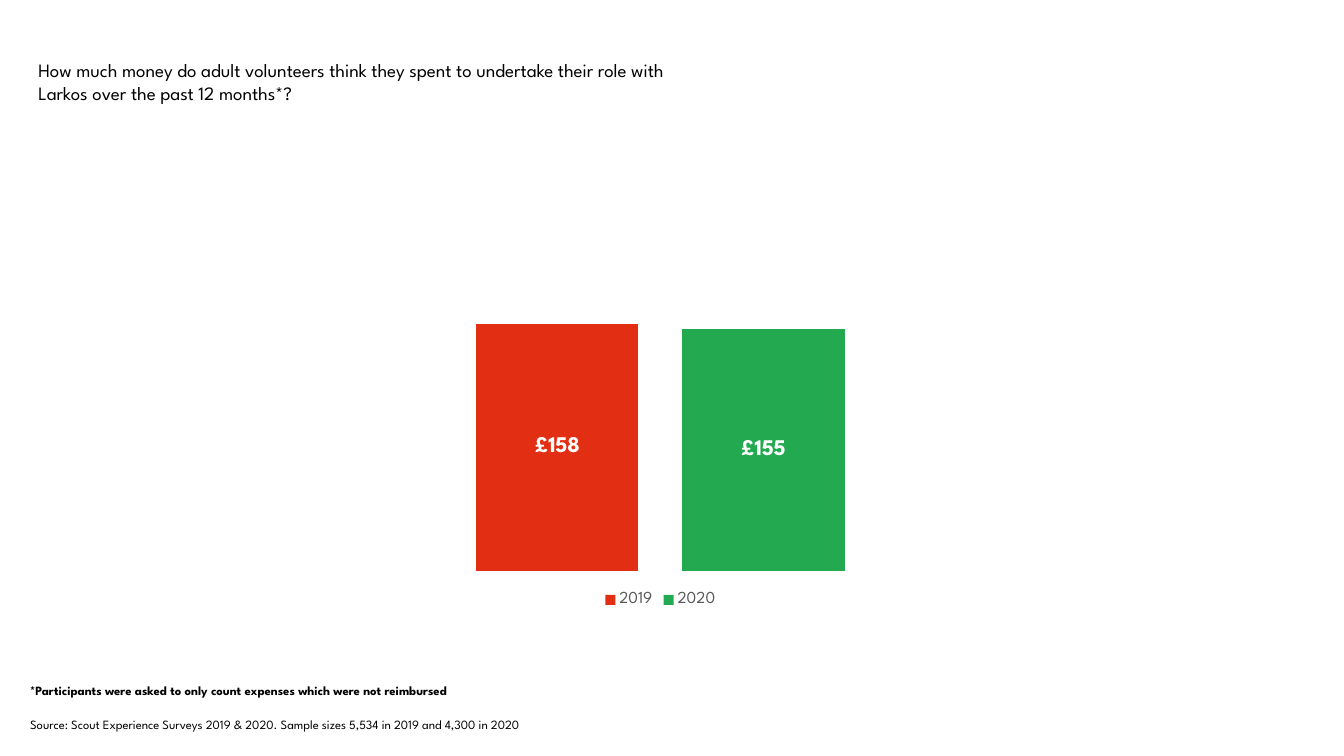
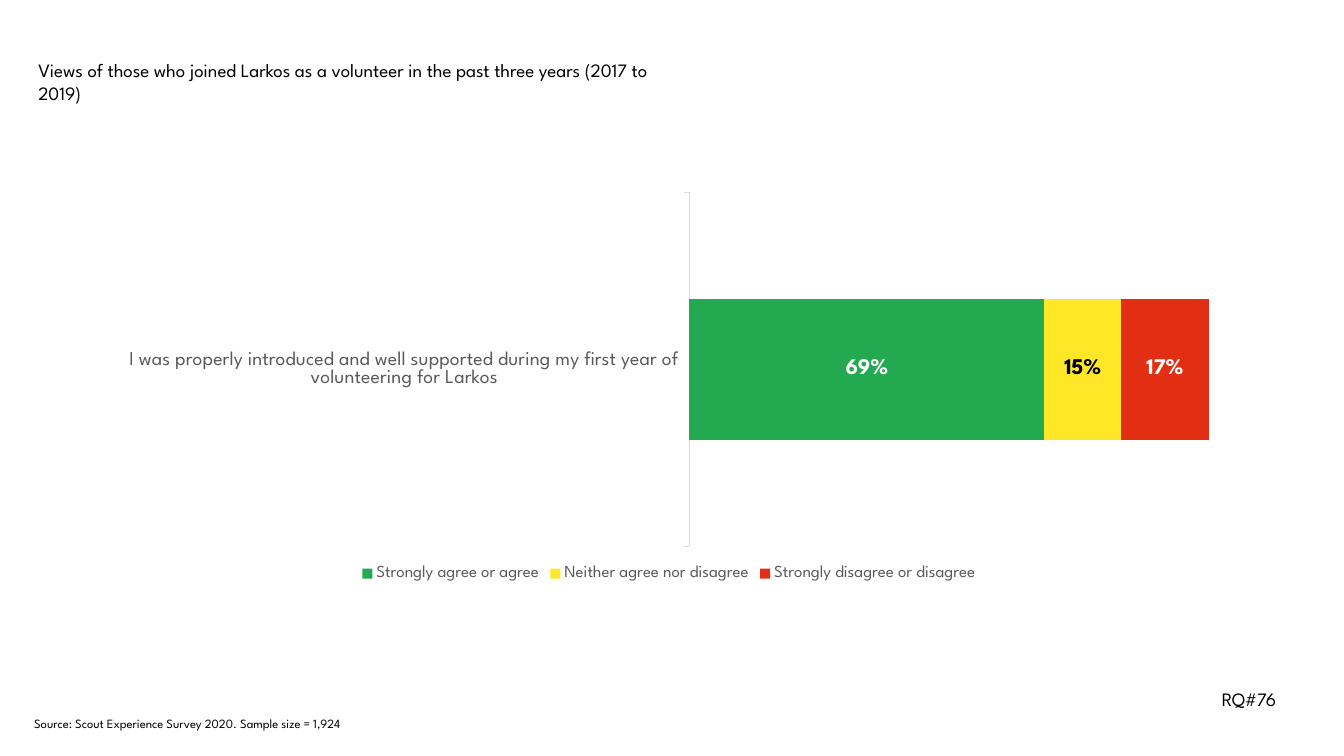
from pptx import Presentation, util as u
from pptx.chart.data import CategoryChartData
from pptx.dml.color import RGBColor
from pptx.enum import chart as charts, text

PX = 9144  # EMU per px, 100 px to the inch
FONT = "League Spartan"
BLACK, WHITE, GREY, RULE = "000000", "FFFFFF", "595959", "D9D9D9"
RED, GREEN, YELLOW = "E22E12", "23A950", "FFE627"


def px(*lengths):
    return [u.Emu(length * PX) for length in lengths]


def color(value):
    return RGBColor.from_string(value)


def style_font(font, size, ink=BLACK, bold=False):
    font.name, font.size, font.bold = FONT, u.Pt(size), bold
    font.color.rgb = color(ink)


def fill_text(shape, wording, size, bold=False):
    """Set left-aligned text that starts at the top of the shape."""
    frame = shape.text_frame
    frame.text = wording
    frame.word_wrap = True
    frame.auto_size = text.MSO_AUTO_SIZE.NONE
    frame.vertical_anchor = text.MSO_ANCHOR.TOP
    paragraph = frame.paragraphs[0]
    paragraph.alignment = text.PP_ALIGN.LEFT
    style_font(paragraph.runs[0].font, size, bold=bold)


def add_slide(presentation, title):
    slide = presentation.slides.add_slide(presentation.slide_layouts[5])
    shape = slide.shapes.title
    shape.left, shape.top, shape.width, shape.height = px(38, 58, 629, 45)
    fill_text(shape, title, 13.5)
    frame = shape.text_frame
    frame.margin_left = frame.margin_top = frame.margin_right = frame.margin_bottom = 0
    return slide


def add_note(slide, box, wording, size=9, bold=False):
    fill_text(slide.shapes.add_textbox(*px(*box)), wording, size, bold)


def add_bars(slide, box, kind, category, series_rows, label_format, gap, overlap):
    """Add a bar chart; each series row is name, value, fill, label colour."""
    data = CategoryChartData()
    data.categories = [category]
    for name, value, _, _ in series_rows:
        data.add_series(name, [value])
    chart = slide.shapes.add_chart(kind, *px(*box), data).chart
    style_font(chart.font, 10)
    chart.has_title = False
    chart.has_legend = True
    chart.legend.position = charts.XL_LEGEND_POSITION.BOTTOM
    chart.legend.include_in_layout = False
    style_font(chart.legend.font, 12, GREY)
    chart.value_axis.visible = False
    chart.value_axis.has_major_gridlines = False
    chart.value_axis.minimum_scale = 0

    plot = chart.plots[0]
    plot.gap_width, plot.overlap, plot.vary_by_categories = gap, overlap, False
    for series, (_, _, fill, ink) in zip(plot.series, series_rows):
        series.format.fill.solid()
        series.format.fill.fore_color.rgb = color(fill)
        labels = series.data_labels
        labels.show_value = True
        labels.number_format = label_format
        labels.number_format_is_linked = False
        labels.position = charts.XL_LABEL_POSITION.CENTER
        style_font(labels.font, 16, ink, bold=True)
    return chart


def build_spending(presentation):
    slide = add_slide(
        presentation,
        "How much money do adult volunteers think they spent to undertake "
        "their role with Larkos over the past 12 months*?")
    chart = add_bars(
        slide, (281, 123, 748, 484), charts.XL_CHART_TYPE.COLUMN_CLUSTERED, "1",
        [("2019", 158, RED, WHITE), ("2020", 155, GREEN, WHITE)],
        '"£"#,##0', gap=219, overlap=-27)
    chart.value_axis.maximum_scale = 280
    chart.category_axis.visible = False
    add_note(slide, (20, 706, 951, 25),
             "Source: Scout Experience Surveys 2019 & 2020. "
             "Sample sizes 5,534 in 2019 and 4,300 in 2020")
    add_note(slide, (20, 673, 951, 25),
             "*Participants were asked to only count expenses which were not reimbursed",
             bold=True)


def build_support(presentation):
    slide = add_slide(
        presentation,
        "Views of those who joined Larkos as a volunteer in the past three "
        "years (2017 to 2019)")
    chart = add_bars(
        slide, (106, 183, 1115, 398), charts.XL_CHART_TYPE.BAR_STACKED_100,
        "I was properly introduced and well supported during my first year of "
        "volunteering for Larkos",
        [("Strongly agree or agree", 0.69, GREEN, WHITE),
         ("Neither agree nor disagree", 0.15, YELLOW, BLACK),
         ("Strongly disagree or disagree", 0.17, RED, WHITE)],
        "0%", gap=150, overlap=100)
    chart.value_axis.maximum_scale = 1
    axis = chart.category_axis
    axis.major_tick_mark = charts.XL_TICK_MARK.OUTSIDE
    axis.format.line.color.rgb = color(RULE)
    axis.format.line.width = u.Pt(0.75)
    style_font(axis.tick_labels.font, 14, GREY)
    add_note(slide, (24, 705, 393, 25),
             "Source: Scout Experience Survey 2020. Sample size = 1,924")
    add_note(slide, (1202, 677, 84, 33), "RQ#76", size=13.5)


def main():
    presentation = Presentation()
    presentation.slide_width, presentation.slide_height = px(1333, 750)
    build_spending(presentation)
    build_support(presentation)
    presentation.save("out.pptx")


if __name__ == "__main__":
    main()
